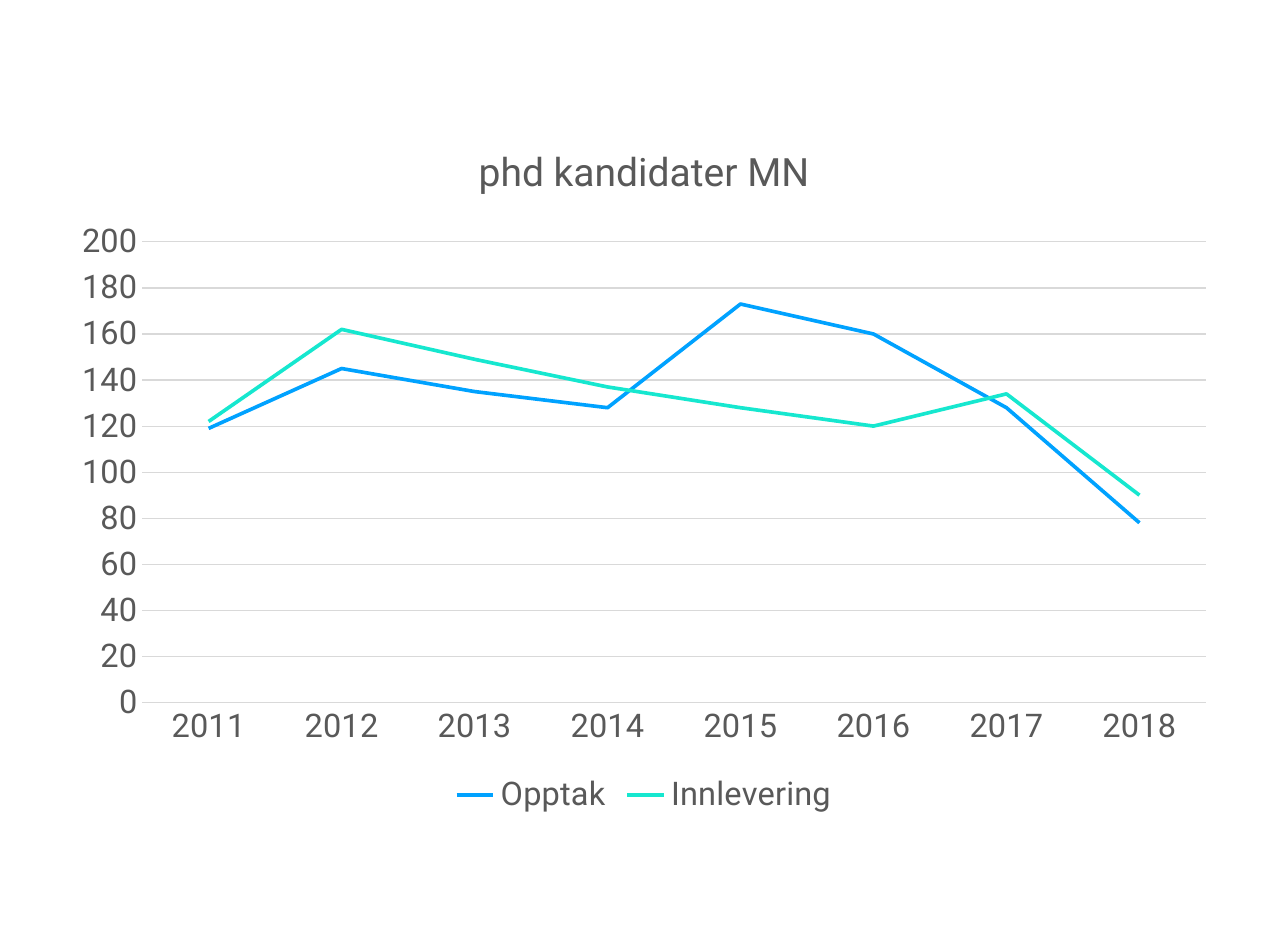
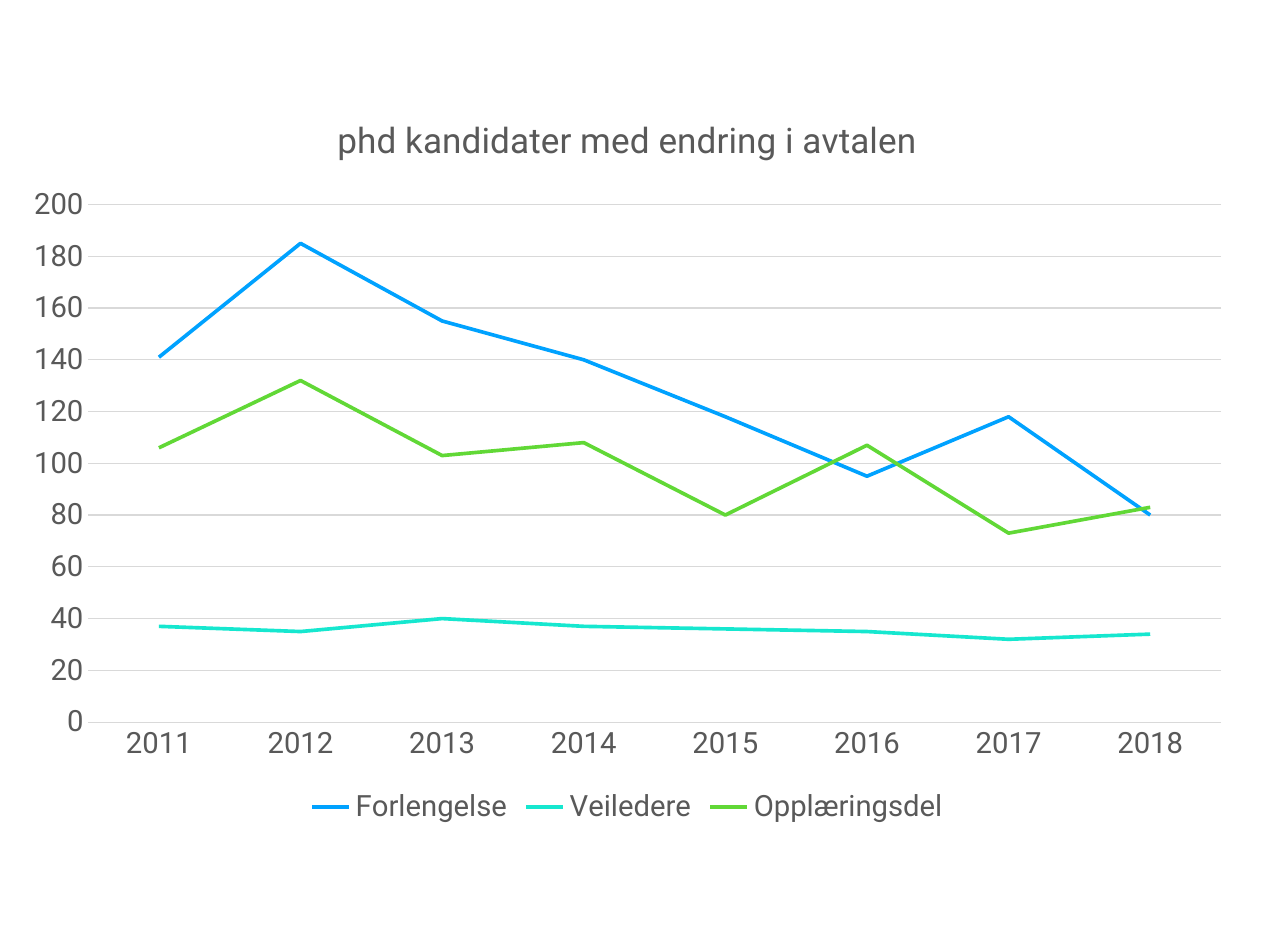
from pptx import Presentation
from pptx.chart.data import CategoryChartData
from pptx.dml.color import RGBColor
from pptx.enum.chart import XL_CHART_TYPE, XL_LEGEND_POSITION, XL_TICK_MARK
from pptx.util import Pt

LINE = XL_CHART_TYPE.LINE
BOTTOM = XL_LEGEND_POSITION.BOTTOM
NO_TICK = XL_TICK_MARK.NONE
BLANK = 6
FONT = "Roboto"
TITLE_SCALE = 1.2
COLORS = {
    "text": "595959",
    "grid": "D9D9D9",
    "blue": "00A2FF",
    "teal": "16E7CF",
    "green": "61D836",
}
SERIES_COLORS = ("blue", "teal", "green")
YEARS = [str(year) for year in range(2011, 2019)]


def set_font(font, size):
    font.name = FONT
    font.size = Pt(size)
    font.bold = False
    font.color.rgb = RGBColor.from_string(COLORS["text"])


def set_line(line, color, width):
    line.color.rgb = RGBColor.from_string(COLORS[color])
    line.width = Pt(width)


def format_title(chart, title, size):
    chart.has_title = True
    p = chart.chart_title.text_frame.paragraphs[0]
    p.text = title
    set_font(p.font, size)
    set_font(p.runs[0].font, size)
    chart.chart_title.include_in_layout = False


def format_axes(chart, size):
    for axis in (chart.category_axis, chart.value_axis):
        axis.major_tick_mark = NO_TICK
        axis.minor_tick_mark = NO_TICK
        set_font(axis.tick_labels.font, size)
    set_line(chart.category_axis.format.line, "grid", 0.75)
    values = chart.value_axis
    values.minimum_scale = 0
    values.maximum_scale = 200
    values.major_unit = 20
    values.format.line.fill.background()
    values.has_major_gridlines = True
    set_line(values.major_gridlines.format.line, "grid", 0.75)


def format_legend(chart, size):
    chart.has_legend = True
    chart.legend.position = BOTTOM
    chart.legend.include_in_layout = False
    set_font(chart.legend.font, size)


def add_line_chart(s, title, series, box, size):
    data = CategoryChartData()
    data.categories = YEARS
    for name, values in series.items():
        data.add_series(name, values)
    chart = s.shapes.add_chart(LINE, *map(Pt, box), data).chart
    set_font(chart.font, size)
    format_title(chart, title, size * TITLE_SCALE)
    format_axes(chart, size)
    format_legend(chart, size)
    plot = chart.plots[0]
    plot.vary_by_categories = False
    for item, color in zip(plot.series, SERIES_COLORS):
        item.smooth = False
        set_line(item.format.line, color, 2.25)


def main():
    prs = Presentation()
    prs.slide_width = Pt(792)
    prs.slide_height = Pt(576.72)
    charts = [
        ("phd kandidater MN", {
            "Opptak": (119, 145, 135, 128, 173, 160, 128, 78),
            "Innlevering": (122, 162, 149, 137, 128, 120, 134, 90),
        }, (36, 72.72, 720, 432), 20),
        ("phd kandidater med endring i avtalen", {
            "Forlengelse": (141, 185, 155, 140, 118, 95, 118, 80),
            "Veiledere": (37, 35, 40, 37, 36, 35, 32, 34),
            "Opplæringsdel": (106, 132, 103, 108, 80, 107, 73, 83),
        }, (5.76, 54.72, 760.32, 455.76), 18),
    ]
    for title, series, box, size in charts:
        s = prs.slides.add_slide(prs.slide_layouts[BLANK])
        add_line_chart(s, title, series, box, size)
    prs.save("out.pptx")


if __name__ == "__main__":
    main()
